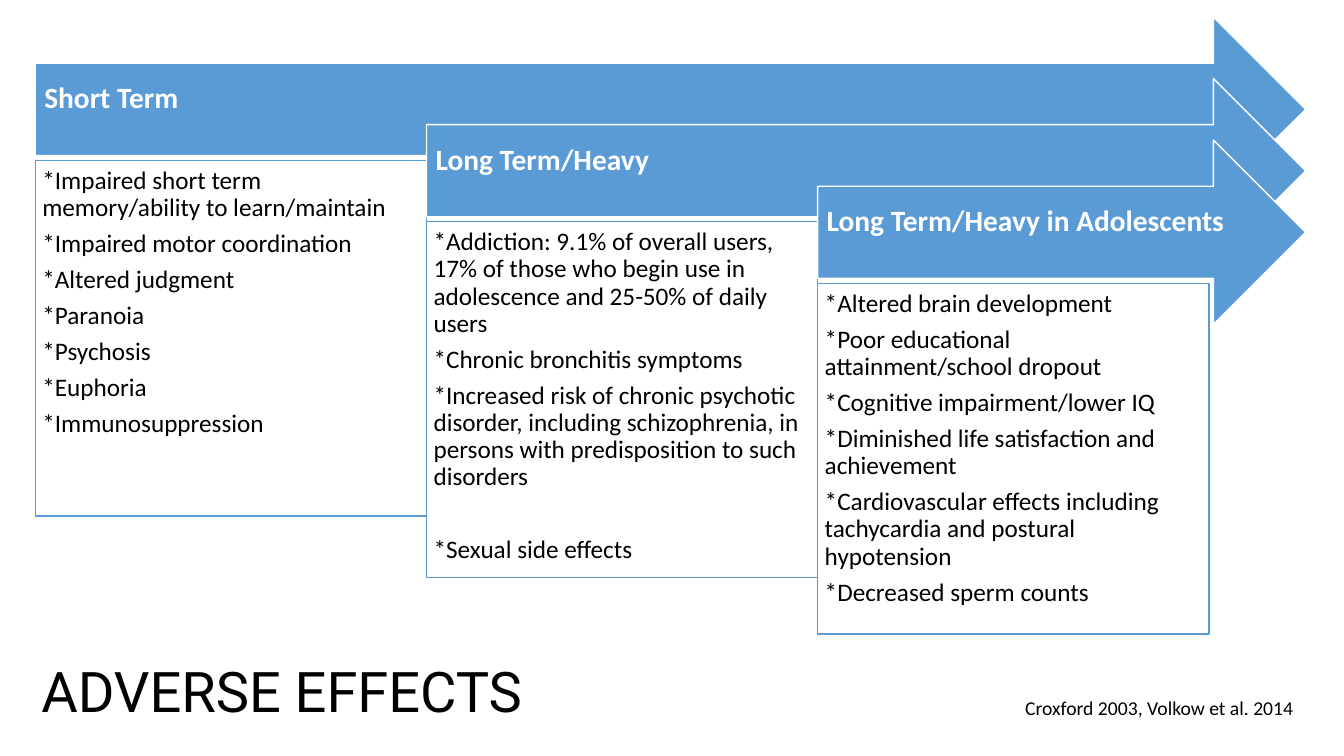
from dataclasses import dataclass

from pptx import Presentation
from pptx.dml.color import RGBColor
from pptx.enum.shapes import MSO_SHAPE
from pptx.enum.text import MSO_ANCHOR, MSO_AUTO_SIZE, PP_ALIGN
from pptx.shapes.autoshape import Shape
from pptx.slide import Slide
from pptx.text.text import _Paragraph
from pptx.util import Inches, Pt

ARROW, RECTANGLE = MSO_SHAPE.RIGHT_ARROW, MSO_SHAPE.RECTANGLE
TOP, MIDDLE = MSO_ANCHOR.TOP, MSO_ANCHOR.MIDDLE
LEFT = PP_ALIGN.LEFT
NO_FIT, GROW = MSO_AUTO_SIZE.NONE, MSO_AUTO_SIZE.SHAPE_TO_FIT_TEXT

COLOURS = {"blue": "5B9BD5", "white": "FFFFFF", "black": "000000"}
FIRST_LEFT, FIRST_TOP = 0.35, 0.17
STEP_ACROSS, STEP_DOWN = 3.88, 0.61
ARROW_TIP, ARROW_HEIGHT = 12.95, 1.83
CARD_DROP = 1.42
LINE_SPACING, SPACE_AFTER, GROUP_GAP = 0.9, 6.3, 25.7


@dataclass(frozen=True)
class Stage:
    heading: str
    effects: list[str]
    card_height: float = 3.53
    separate_last: bool = False


STAGES = [
    Stage("Short Term", [
        "*Impaired short term memory/ability to learn/maintain",
        "*Impaired motor coordination",
        "*Altered judgment",
        "*Paranoia",
        "*Psychosis",
        "*Euphoria",
        "*Immunosuppression",
    ]),
    Stage("Long Term/Heavy", [
        "*Addiction: 9.1% of overall users, 17% of those who begin use in "
        "adolescence and 25-50% of daily users",
        "*Chronic bronchitis symptoms",
        "*Increased risk of chronic psychotic disorder, including schizophrenia, "
        "in persons with predisposition to such disorders",
        "*Sexual side effects",
    ], separate_last=True),
    Stage("Long Term/Heavy in Adolescents", [
        "*Altered brain development",
        "*Poor educational attainment/school dropout",
        "*Cognitive impairment/lower IQ",
        "*Diminished life satisfaction and achievement",
        "*Cardiovascular effects including tachycardia and postural hypotension",
        "*Decreased sperm counts",
    ], card_height=3.48),
]


def colour(name: str) -> RGBColor:
    return RGBColor.from_string(COLOURS[name])


def style_paragraph(para: _Paragraph, size: float, ink: str,
                    bold: bool = False, face: str = "Calibri") -> None:
    para.alignment = LEFT
    para.font.name = face
    para.font.size = Pt(size)
    para.font.bold = bold
    para.font.color.rgb = colour(ink)


def place(shape: Shape, left: float, top: float, width: float, height: float) -> None:
    shape.left, shape.top = Inches(left), Inches(top)
    shape.width, shape.height = Inches(width), Inches(height)


def add_panel(slide: Slide, kind: MSO_SHAPE, box: tuple[float, ...], fill: str,
              line: str, insets: tuple[float, ...], anchor: MSO_ANCHOR) -> Shape:
    panel = slide.shapes.add_shape(kind, *map(Inches, box))
    panel.shadow.inherit = False
    panel.fill.solid()
    panel.fill.fore_color.rgb = colour(fill)
    panel.line.color.rgb = colour(line)
    panel.line.width = Pt(1)
    frame = panel.text_frame
    frame.word_wrap = True
    frame.vertical_anchor = anchor
    (frame.margin_left, frame.margin_top,
     frame.margin_right, frame.margin_bottom) = map(Inches, insets)
    return panel


def write_lines(panel: Shape, lines: list[str], size: float, ink: str,
                bold: bool = False) -> None:
    frame = panel.text_frame
    for index, line in enumerate(lines):
        para = frame.add_paragraph() if index else frame.paragraphs[0]
        para.text = line
        para.line_spacing = LINE_SPACING
        para.space_after = Pt(SPACE_AFTER)
        style_paragraph(para, size, ink, bold)


def add_stage(slide: Slide, stage: Stage, index: int) -> None:
    left = FIRST_LEFT + index * STEP_ACROSS
    top = FIRST_TOP + index * STEP_DOWN
    arrow = add_panel(slide, ARROW, (left, top, ARROW_TIP - left, ARROW_HEIGHT),
                      "blue", "white", (0.09, 0.09, 0.28, 0.29), MIDDLE)
    write_lines(arrow, [stage.heading], 21, "white", bold=True)
    card = add_panel(slide, RECTANGLE,
                     (left, top + CARD_DROP, STEP_ACROSS, stage.card_height),
                     "white", "blue", (0.07, 0.07, 0.07, 0.07), TOP)
    write_lines(card, stage.effects, 18, "black")
    if stage.separate_last:
        card.text_frame.paragraphs[-1].space_before = Pt(GROUP_GAP)


def add_title(slide: Slide) -> None:
    title = slide.shapes.title
    place(title, 0.31, 6.46, 7.79, 0.77)
    frame = title.text_frame
    frame.text = "ADVERSE EFFECTS"
    frame.vertical_anchor = TOP
    frame.auto_size = NO_FIT
    style_paragraph(frame.paragraphs[0], 40, "black", face="Roboto")


def add_citation(slide: Slide) -> None:
    box = slide.shapes.add_textbox(*map(Inches, (10.07, 6.86, 2.92, 0.34)))
    frame = box.text_frame
    frame.text = "Croxford 2003, Volkow et al. 2014"
    frame.word_wrap = False
    frame.auto_size = GROW
    style_paragraph(frame.paragraphs[0], 14, "black")


def main() -> None:
    deck = Presentation()
    deck.slide_width, deck.slide_height = Inches(13.33), Inches(7.5)
    slide = deck.slides.add_slide(deck.slide_layouts.get_by_name("Title Only"))
    for index, stage in enumerate(STAGES):
        add_stage(slide, stage, index)
    add_citation(slide)
    add_title(slide)
    deck.save("out.pptx")


if __name__ == "__main__":
    main()
